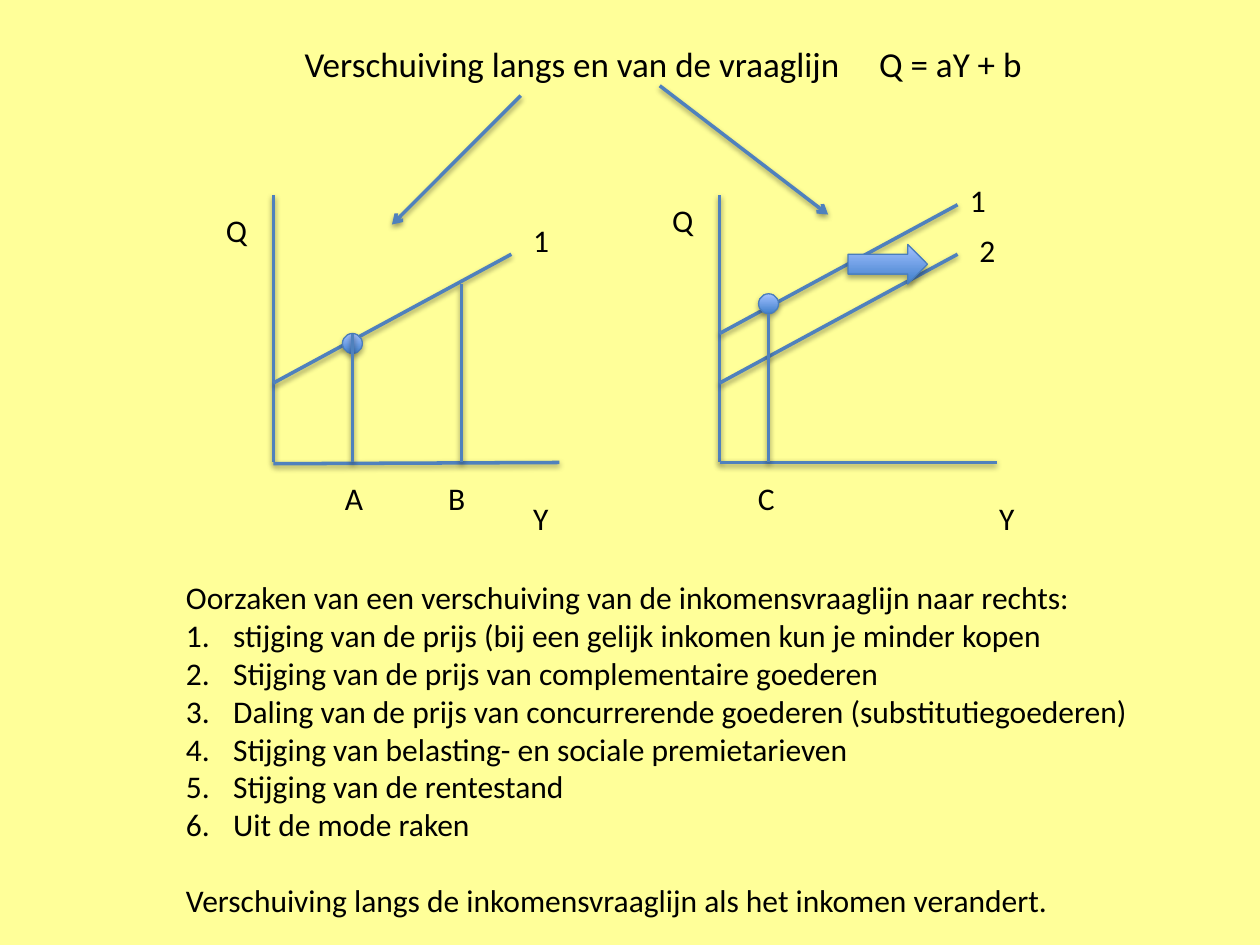
from pptx import Presentation
from pptx.dml.color import RGBColor
from pptx.enum.shapes import MSO_CONNECTOR as Conn, MSO_SHAPE as Form
from pptx.oxml.ns import qn
from pptx.util import Pt
from lxml.etree import SubElement as Sub

YELLOW = RGBColor(0xFF, 0xFF, 0x99)
BLUE = RGBColor(0x4F, 0x81, 0xBD)
BLACK = RGBColor(0, 0, 0)

deck = Presentation()
deck.slide_width, deck.slide_height = Pt(720), Pt(540)
slide = deck.slides.add_slide(deck.slide_layouts[6])
slide.background.fill.solid()
slide.background.fill.fore_color.rgb = YELLOW
shapes = slide.shapes


def add_line(x1, y1, x2, y2):
    """Draw a blue line that keeps the soft shadow of the theme."""
    line = shapes.add_connector(Conn.STRAIGHT, Pt(x1), Pt(y1), Pt(x2), Pt(y2))
    line.line.color.rgb = BLUE
    line.line.width = Pt(2)
    return line


def add_text(x, y, wide, high, lines, size=18):
    box = shapes.add_textbox(Pt(x), Pt(y), Pt(wide), Pt(high))
    frame = box.text_frame
    frame.word_wrap = True
    frame.text = "\n".join(lines)
    for para in frame.paragraphs:
        para.font.name = "Calibri"
        para.font.size = Pt(size)
        para.font.color.rgb = BLACK
    return frame


# Title and formula
add_text(167, 21, 325, 32, ["Verschuiving langs en van de vraaglijn"], 20)
add_text(495.3, 21, 120, 32, ["Q = aY + b"], 20)

# Axes: origin, right end and base of each graph
TOP, BASE = 111.6, 264.3
LEFT, RIGHT = 156.2, 411.2
for x, end, low in [(LEFT, 319.7, 265), (RIGHT, 569.5, BASE)]:
    add_line(x, TOP, x, BASE)
    add_line(end, BASE, x, low)

# Demand lines, all with the same slope
for x, y in [(LEFT, 218.9), (RIGHT, 218.9), (RIGHT, 190.6)]:
    add_line(x, y, x + 136, y - 73.6)

# Points on the demand lines; fill, outline and shadow come from the theme
DOT = 11.4
for x, y in [(201.4, 196.3), (439.2, 173.6)]:
    shapes.add_shape(Form.OVAL, Pt(x - DOT / 2), Pt(y - DOT / 2), Pt(DOT), Pt(DOT))

# Drop lines to the horizontal axis
for x, y in [(201.4, 190.6), (439.2, 179.3), (263.6, 162.2)]:
    add_line(x, y, x, BASE)

# Labels
for text, x, y in [
    ("Q", 122, 117), ("Q", 377, 111.4),
    ("Y", 563.9, 281.4), ("Y", 297.6, 281.4),
    ("A", 190, 270), ("B", 249, 270), ("C", 426, 270),
    ("1", 297.6, 122.6), ("2", 552.6, 128.3), ("1", 547.2, 100),
]:
    add_text(x, y, 30, 29, [text])

# Arrows from the title to the graphs
for ends in [(297.6, 54.7, 224, 128.3), (377, 49, 473.2, 122.6)]:
    arrow = add_line(*ends)
    Sub(arrow.line._get_or_add_ln(), qn("a:tailEnd"), type="arrow")

# Causes of a shift
causes = [
    "stijging van de prijs (bij een gelijk inkomen kun je minder kopen",
    "Stijging van de prijs van complementaire goederen",
    "Daling van de prijs van concurrerende goederen (substitutiegoederen)",
    "Stijging van belasting- en sociale premietarieven",
    "Stijging van de rentestand",
    "Uit de mode raken",
]
intro = "Oorzaken van een verschuiving van de inkomensvraaglijn naar rechts:"
close = "Verschuiving langs de inkomensvraaglijn als het inkomen verandert."
frame = add_text(99.2, 327, 595.4, 204, [intro, *causes, close])
for para in frame.paragraphs[1:-1]:
    props = para._p.get_or_add_pPr()
    props.set("marL", str(Pt(27)))
    props.set("indent", str(-Pt(27)))
    # Numbering precedes the default font settings in the schema
    number = Sub(props, qn("a:buAutoNum"), type="arabicPeriod")
    props.insert(0, number)
frame.paragraphs[-1].space_before = Pt(21.6)

# Shift of the demand line
shapes.add_shape(Form.RIGHT_ARROW, Pt(484.6), Pt(139.7), Pt(45.4), Pt(22.6))

deck.save("out.pptx")
